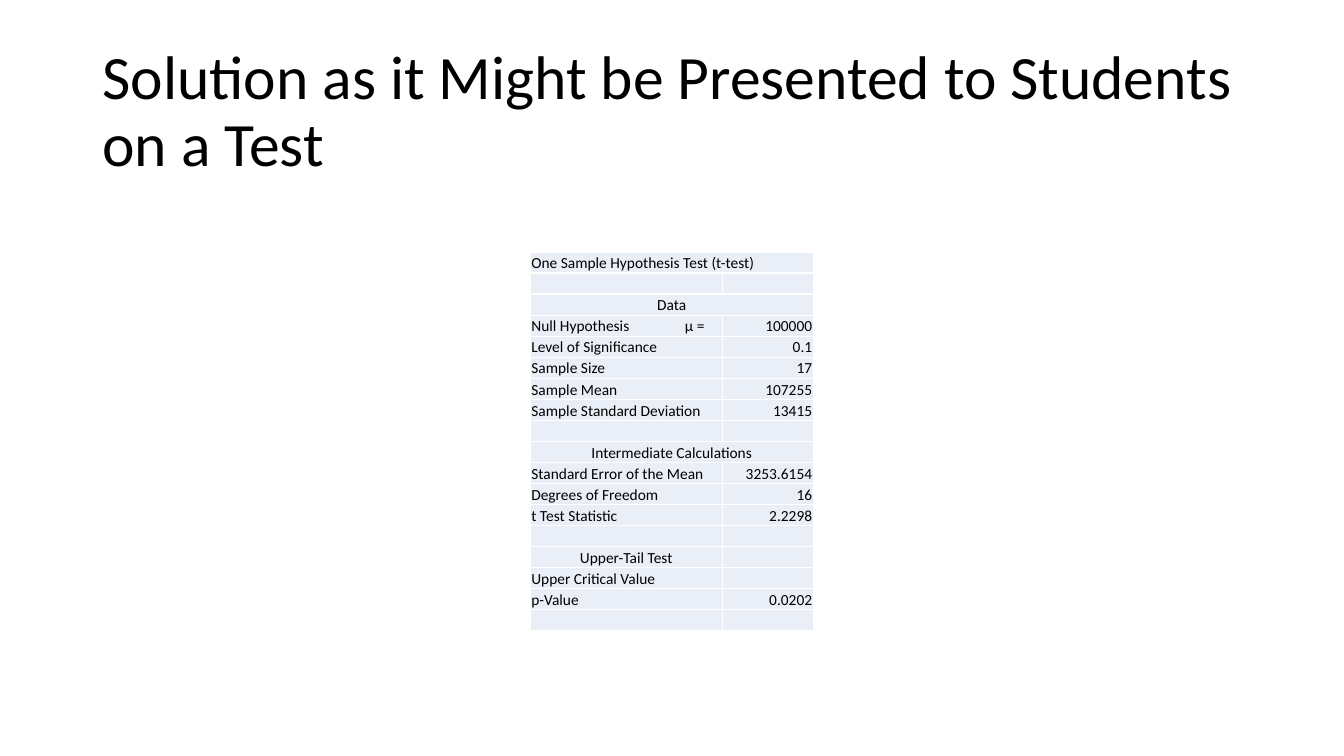
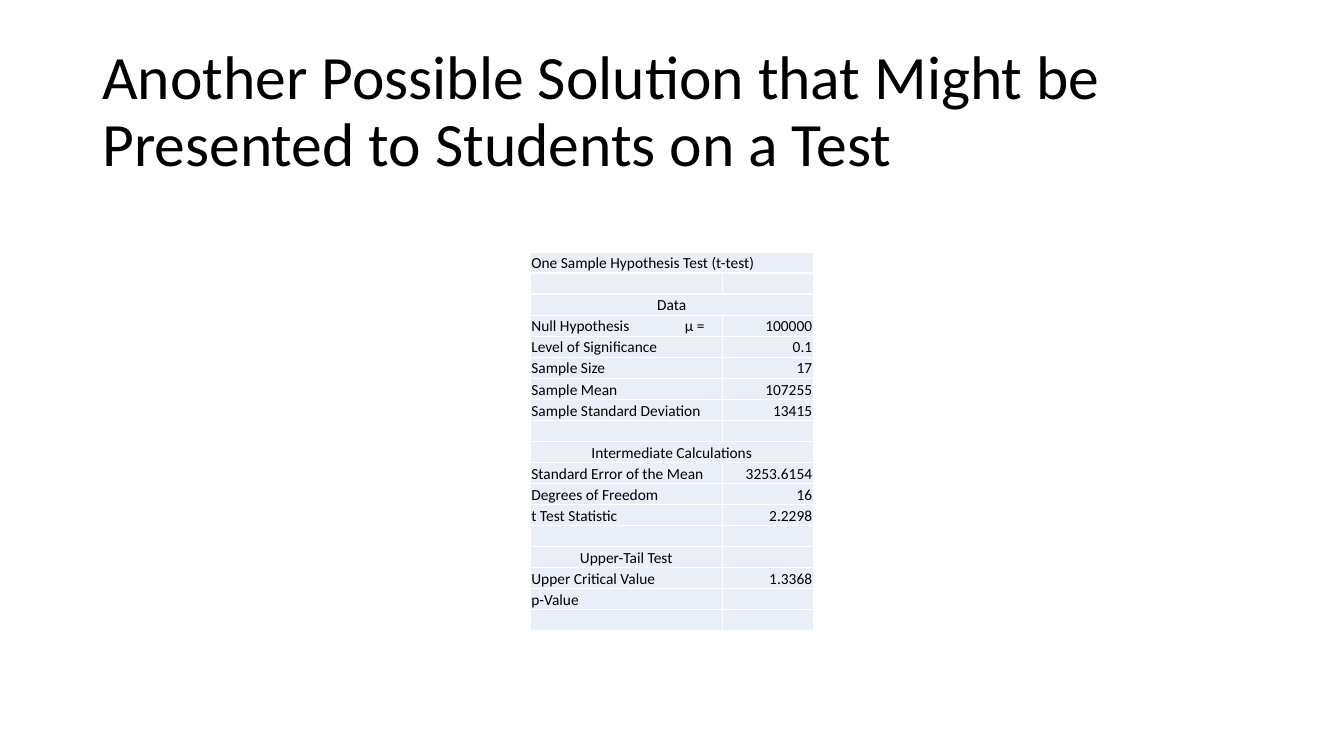
from lxml.etree import SubElement
from pptx import Presentation
from pptx.dml.color import RGBColor
from pptx.enum.text import MSO_ANCHOR, PP_ALIGN
from pptx.oxml import parse_xml
from pptx.oxml.ns import nsdecls, qn
from pptx.util import Cm, Pt

# Shared look
BLACK, WHITE, PALE = "000000", "FFFFFF", "EAEFF7"
TITLE_FONT = {"name": "Calibri", "size": Pt(44)}
CELL_FONT = {"name": "Calibri", "size": Pt(11)}
CELL_FORMAT = {
    "vertical_anchor": MSO_ANCHOR.BOTTOM,
    "margin_left": Cm(0.03),
    "margin_right": Cm(0.03),
    "margin_top": Cm(0.03),
    "margin_bottom": Cm(0),
}
COL_WIDTHS = [Cm(4.85), Cm(2.29)]
ROW_HEIGHT = Cm(0.53)
MU_TAB = Cm(3.87)
LEFT, CENTER, RIGHT = PP_ALIGN.LEFT, PP_ALIGN.CENTER, PP_ALIGN.RIGHT

# Slide title, upper critical value, p-value
SLIDES = [
    ("Solution as it Might be Presented to Students on a Test", "", "0.0202"),
    ("Another Possible Solution that Might be Presented to Students on a Test", "1.3368", ""),
]


def rgb(color):
    return RGBColor.from_string(color)


def add_text(p, text, fmt):
    r = p.add_run()
    r.text = text
    for name, value in fmt.items():
        setattr(r.font, name, value)
    r.font.color.rgb = rgb(BLACK)


prs = Presentation()
prs.slide_width, prs.slide_height = Cm(33.87), Cm(19.05)

for title, critical_value, p_value in SLIDES:
    s = prs.slides.add_slide(prs.slide_layouts[6])

    # Title
    tf = s.shapes.add_textbox(Cm(2.33), Cm(1.01), Cm(29.21), Cm(3.68)).text_frame
    tf.word_wrap = True
    tf.vertical_anchor = MSO_ANCHOR.MIDDLE
    p = tf.paragraphs[0]
    p.line_spacing = 0.9
    add_text(p, title, TITLE_FONT)

    # Rows: label, value (None spans both columns), label alignment
    rows = [
        ("One Sample Hypothesis Test (t-test)", None, LEFT),
        ("", "", LEFT),
        ("Data", None, CENTER),
        ("Null Hypothesis\tμ =", "100000", LEFT),
        ("Level of Significance", "0.1", LEFT),
        ("Sample Size", "17", LEFT),
        ("Sample Mean", "107255", LEFT),
        ("Sample Standard Deviation", "13415", LEFT),
        ("", "", LEFT),
        ("Intermediate Calculations", None, CENTER),
        ("Standard Error of the Mean", "3253.6154", LEFT),
        ("Degrees of Freedom", "16", LEFT),
        ("t Test Statistic", "2.2298", LEFT),
        ("", "", LEFT),
        ("Upper-Tail Test", "", CENTER),
        ("Upper Critical Value", critical_value, LEFT),
        ("p-Value", p_value, LEFT),
        ("", "", LEFT),
    ]

    # Table
    table = s.shapes.add_table(len(rows), len(COL_WIDTHS), Cm(13.36), Cm(6.35),
                               sum(COL_WIDTHS), ROW_HEIGHT * len(rows)).table
    table.first_row = table.horz_banding = False
    for column, width in zip(table.columns, COL_WIDTHS):
        column.width = width

    for i, (label, value, align) in enumerate(rows):
        table.rows[i].height = ROW_HEIGHT
        if value is None:
            table.cell(i, 0).merge(table.cell(i, 1))
        for j, (text, al) in enumerate([(label, align), (value, RIGHT)]):
            cell = table.cell(i, j)
            for name, val in CELL_FORMAT.items():
                setattr(cell, name, val)

            # Borders come before the fill in the cell properties
            tcPr = cell._tc.get_or_add_tcPr()
            for side in ("lnL", "lnR", "lnT", "lnB"):
                tcPr.append(parse_xml(
                    f'<a:{side} {nsdecls("a")} w="{Pt(1)}"><a:solidFill>'
                    f'<a:srgbClr val="{WHITE}"/></a:solidFill></a:{side}>'))
            cell.fill.solid()
            cell.fill.fore_color.rgb = rgb(PALE)

            # Text; an empty cell keeps the small size so its row stays low
            p = cell.text_frame.paragraphs[0]
            p.alignment = al
            if text:
                add_text(p, text, CELL_FONT)
            else:
                SubElement(p._p, qn("a:endParaRPr"), sz=str(int(CELL_FONT["size"].pt * 100)))
            if text and "\t" in text:
                tabs = SubElement(p._p.get_or_add_pPr(), qn("a:tabLst"))
                SubElement(tabs, qn("a:tab"), pos=str(MU_TAB), algn="l")

prs.save("out.pptx")
